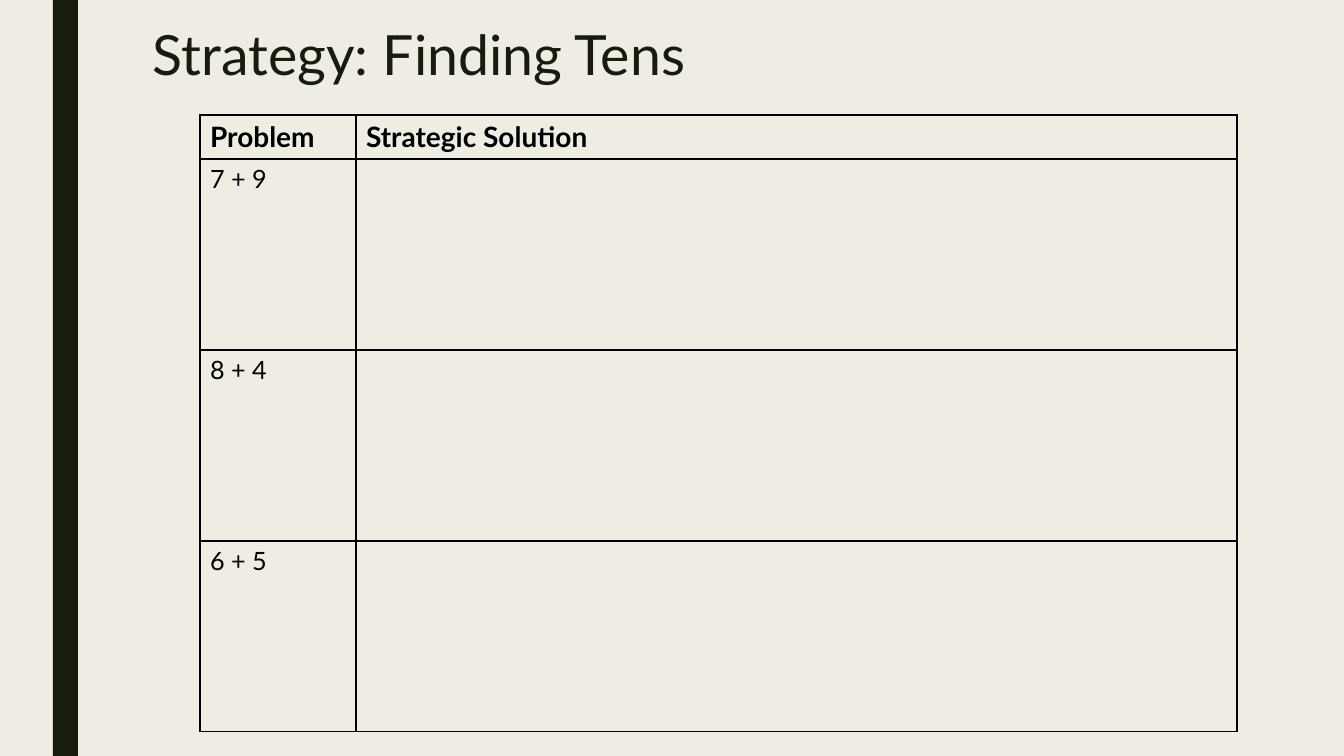
from lxml import etree
from pptx import Presentation
from pptx.dml.color import RGBColor
from pptx.enum.shapes import MSO_SHAPE
from pptx.enum.text import MSO_ANCHOR
from pptx.oxml.ns import qn
from pptx.util import Emu, Pt

RECTANGLE = MSO_SHAPE.RECTANGLE
TOP = MSO_ANCHOR.TOP
CREAM = RGBColor(0xEF, 0xED, 0xE3)
DARK = RGBColor(0x19, 0x1B, 0x0E)
BLACK = RGBColor(0, 0, 0)
FONT = "Lato"
SLIDE_WIDTH, SLIDE_HEIGHT = 1344, 756
HEADER_HEIGHT, PROBLEM_HEIGHT = 44, 191
COLUMN_WIDTHS = [156, 881]
ROWS = [
    ("Problem", "Strategic Solution"),
    ("7 + 9", ""),
    ("8 + 4", ""),
    ("6 + 5", ""),
]


def px(length):
    return Emu(round(length * 12192000 / SLIDE_WIDTH))


def style(font, size, color, bold=False):
    font.name = FONT
    font.size = Pt(size)
    font.bold = bold
    font.color.rgb = color


prs = Presentation()
prs.slide_width, prs.slide_height = px(SLIDE_WIDTH), px(SLIDE_HEIGHT)
slide = prs.slides.add_slide(prs.slide_layouts[6])
slide.background.fill.solid()
slide.background.fill.fore_color.rgb = CREAM

side_bar = slide.shapes.add_shape(RECTANGLE, px(53), 0, px(25), px(SLIDE_HEIGHT))
side_bar.shadow.inherit = False
side_bar.fill.solid()
side_bar.fill.fore_color.rgb = DARK
side_bar.line.fill.background()

title = slide.shapes.add_textbox(px(143), px(23), px(1058), px(76)).text_frame
title.word_wrap = True
title.vertical_anchor = TOP
title.text = "Strategy: Finding Tens"
title.paragraphs[0].line_spacing = 0.89
style(title.paragraphs[0].runs[0].font, 39.6, DARK)

row_heights = [HEADER_HEIGHT] + [PROBLEM_HEIGHT] * (len(ROWS) - 1)
problems = slide.shapes.add_table(
    len(ROWS), len(COLUMN_WIDTHS), px(200), px(115),
    px(sum(COLUMN_WIDTHS)), px(sum(row_heights)),
).table
for column, width in zip(problems.columns, COLUMN_WIDTHS):
    column.width = px(width)

for r, (texts, height) in enumerate(zip(ROWS, row_heights)):
    problems.rows[r].height = px(height)
    is_header = r == 0
    for c, text in enumerate(texts):
        cell = problems.cell(r, c)
        cell.text = text
        for run in cell.text_frame.paragraphs[0].runs:
            style(run.font, 20 if is_header else 18, BLACK, is_header)
        # Borders must precede the fill in the cell properties
        properties = cell._tc.get_or_add_tcPr()
        for side in ("a:lnL", "a:lnR", "a:lnT", "a:lnB"):
            border = etree.SubElement(properties, qn(side), w=str(Pt(1)))
            border_fill = etree.SubElement(border, qn("a:solidFill"))
            etree.SubElement(border_fill, qn("a:srgbClr"), val=str(BLACK))
        cell.fill.background()

prs.save("out.pptx")
